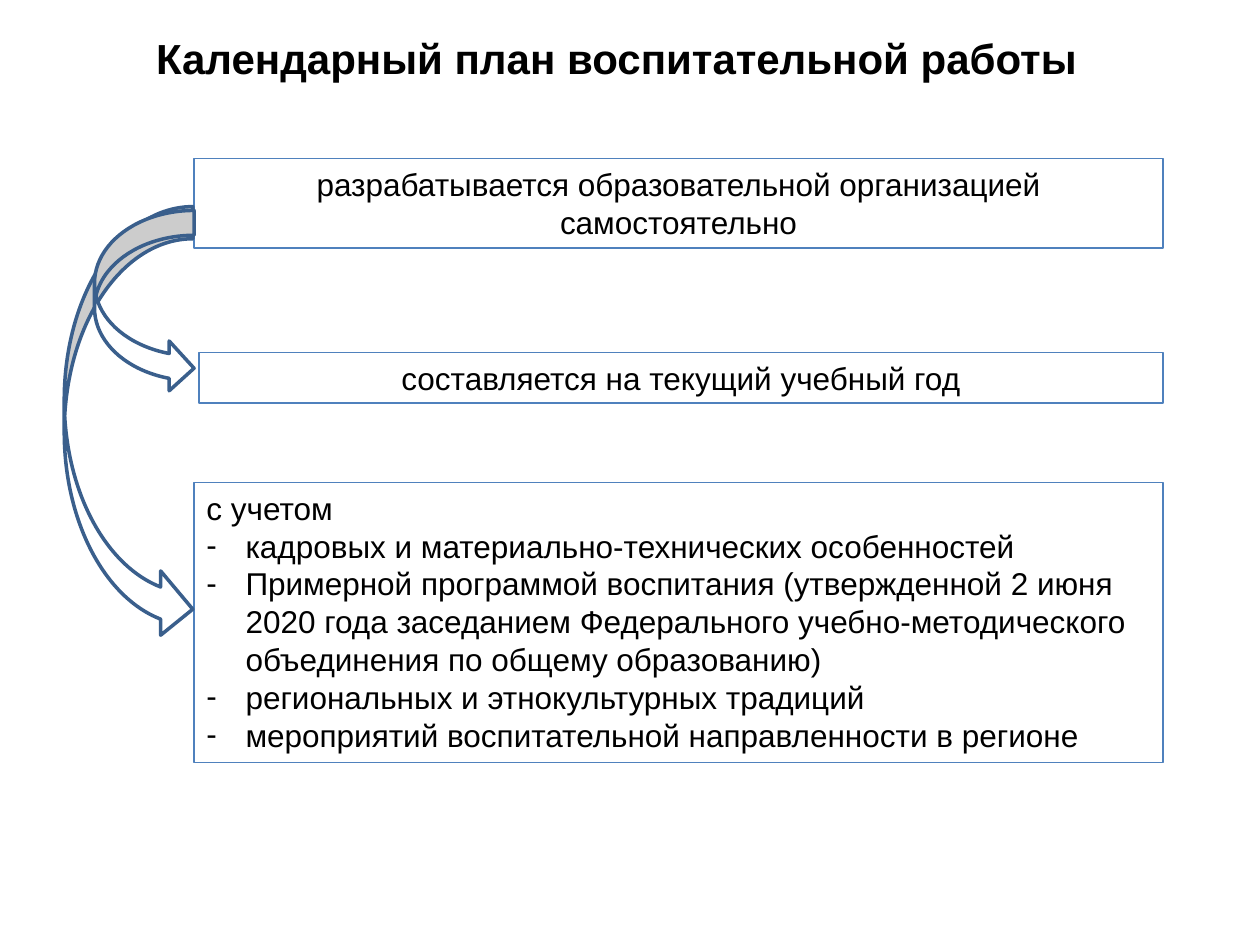
"""Builds the slide about the calendar plan of educational work."""
from lxml.etree import SubElement
from pptx import Presentation
from pptx.dml.color import RGBColor
from pptx.enum.shapes import MSO_SHAPE
from pptx.enum.text import MSO_ANCHOR, PP_ALIGN
from pptx.oxml.ns import qn
from pptx.util import Inches, Pt

COLORS = {"text": "000000", "box_line": "4F81BD", "arrow_fill": "FFFFFF", "arrow_line": "3A5F8C"}
FONT = "Arial"
INDENT = Inches(0.31)

TITLE = ("Календарный план воспитательной работы", (1.14, 0.21, 7.64, 0.5))
STATEMENTS = [
    ("разрабатывается образовательной организацией самостоятельно", (1.54, 1.26, 7.69, 0.71)),
    ("составляется на текущий учебный год", (1.58, 2.8, 7.65, 0.4)),
]
FACTORS_LEAD = "с учетом"
FACTORS = [
    "кадровых и материально-технических особенностей",
    "Примерной программой воспитания (утвержденной 2 июня 2020 года заседанием "
    "Федерального учебно-методического объединения по общему образованию)",
    "региональных и этнокультурных традиций",
    "мероприятий воспитательной направленности в регионе",
]
FACTORS_AREA = (1.54, 3.83, 7.69, 2.22)
ARROWS = [(0.51, 1.64, 1.02, 3.45), (0.75, 1.67, 0.79, 1.45)]


def color(name):
    return RGBColor.from_string(COLORS[name])


def inches(area):
    return [Inches(length) for length in area]


def write(frame, lines, size, align=PP_ALIGN.LEFT, bold=False):
    frame.word_wrap = True
    for number, line in enumerate(lines):
        paragraph = frame.add_paragraph() if number else frame.paragraphs[0]
        paragraph.text = line
        paragraph.alignment = align
        paragraph.font.name = FONT
        paragraph.font.size = Pt(size)
        paragraph.font.bold = bold
        paragraph.font.color.rgb = color("text")


def add_outlined(slide, kind, area, line, width):
    shape = slide.shapes.add_shape(kind, *inches(area))
    shape.shadow.inherit = False
    shape.line.color.rgb = color(line)
    shape.line.width = Pt(width)
    return shape


def add_box(slide, lines, area, align):
    box = add_outlined(slide, MSO_SHAPE.RECTANGLE, area, "box_line", 0.75)
    box.fill.background()
    box.text_frame.vertical_anchor = MSO_ANCHOR.TOP
    write(box.text_frame, lines, 18, align)
    return box


def add_dash(paragraph):
    properties = paragraph._p.get_or_add_pPr()
    properties.set("marL", str(INDENT))
    properties.set("indent", str(-INDENT))
    bullet_font = SubElement(properties, qn("a:buFont"))
    bullet_font.set("typeface", FONT)
    SubElement(properties, qn("a:buChar")).set("char", "-")
    default_run = properties.find(qn("a:defRPr"))
    if default_run is not None:
        properties.append(default_run)


def main():
    presentation = Presentation()
    presentation.slide_width, presentation.slide_height = Inches(10), Inches(7.5)
    slide = presentation.slides.add_slide(presentation.slide_layouts[6])

    title, title_area = TITLE
    write(slide.shapes.add_textbox(*inches(title_area)).text_frame, [title], 24, bold=True)

    for statement, area in STATEMENTS:
        add_box(slide, [statement], area, PP_ALIGN.CENTER)

    factors = add_box(slide, [FACTORS_LEAD, *FACTORS], FACTORS_AREA, PP_ALIGN.LEFT)
    for paragraph in factors.text_frame.paragraphs[1:]:
        add_dash(paragraph)

    for area in ARROWS:
        arrow = add_outlined(slide, MSO_SHAPE.CURVED_RIGHT_ARROW, area, "arrow_line", 2)
        arrow.fill.solid()
        arrow.fill.fore_color.rgb = color("arrow_fill")

    presentation.save("out.pptx")


if __name__ == "__main__":
    main()
